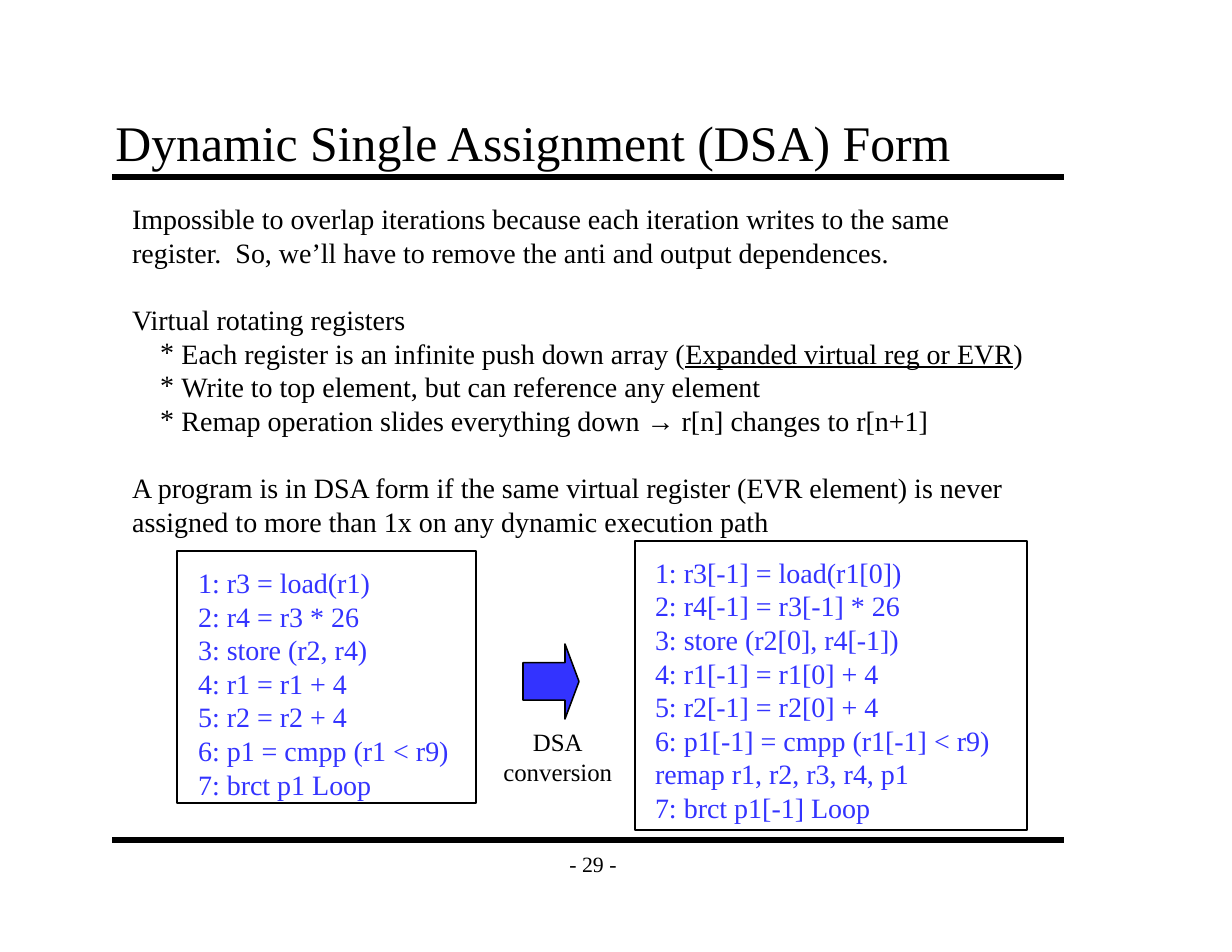
from dataclasses import dataclass

import pptx
import pptx.dml.color
import pptx.enum.shapes
import pptx.enum.text
import pptx.oxml.ns
import pptx.util
from lxml import etree

Inches = pptx.util.Inches
Pt = pptx.util.Pt
Align = pptx.enum.text.PP_ALIGN
Anchor = pptx.enum.text.MSO_ANCHOR
Shape = pptx.enum.shapes.MSO_SHAPE

BLACK = pptx.dml.color.RGBColor(0x00, 0x00, 0x00)
BLUE = pptx.dml.color.RGBColor(0x33, 0x33, 0xFF)
FONT = "Times New Roman"
LINE_RATIO = 1.2
BODY_SIZE = 18


@dataclass(frozen=True)
class Box:
    left: float
    top: float
    width: float
    height: float

    def lengths(self) -> tuple:
        return tuple(Inches(n) for n in (self.left, self.top, self.width, self.height))


@dataclass(frozen=True)
class Listing:
    frame: Box
    text: Box
    lines: tuple[str, ...]


@dataclass(frozen=True)
class BodyLine:
    text: str
    underlined: str = ""
    ending: str = ""
    bullet: bool = False
    opens_block: bool = False


BODY = (
    BodyLine("Impossible to overlap iterations because each iteration writes to the same"),
    BodyLine("register.  So, we’ll have to remove the anti and output dependences."),
    BodyLine("Virtual rotating registers", opens_block=True),
    BodyLine("Each register is an infinite push down array (",
             "Expanded virtual reg or EVR", ")", bullet=True),
    BodyLine("Write to top element, but can reference any element", bullet=True),
    BodyLine("Remap operation slides everything down → r[n] changes to r[n+1]", bullet=True),
    BodyLine("A program is in DSA form if the same virtual register (EVR element) is never",
             opens_block=True),
    BodyLine("assigned to more than 1x on any dynamic execution path"),
)

LISTINGS = (
    Listing(Box(1.58, 4.92, 2.67, 2.25), Box(1.67, 5, 2.44, 2.2), (
        "1: r3 = load(r1)",
        "2: r4 = r3 * 26",
        "3: store (r2, r4)",
        "4: r1 = r1 + 4",
        "5: r2 = r2 + 4",
        "6: p1 = cmpp (r1 < r9)",
        "7: brct p1 Loop",
    )),
    Listing(Box(5.67, 4.83, 3.5, 2.58), Box(5.75, 4.91, 3.19, 2.5), (
        "1: r3[-1] = load(r1[0])",
        "2: r4[-1] = r3[-1] * 26",
        "3: store (r2[0], r4[-1])",
        "4: r1[-1] = r1[0] + 4",
        "5: r2[-1] = r2[0] + 4",
        "6: p1[-1] = cmpp (r1[-1] < r9)",
        "remap r1, r2, r3, r4, p1",
        "7: brct p1[-1] Loop",
    )),
)


def place(shape, box: Box) -> None:
    shape.left, shape.top, shape.width, shape.height = box.lengths()


def format_paragraph(paragraph, size: float, color, alignment=Align.LEFT) -> None:
    paragraph.alignment = alignment
    paragraph.line_spacing = Pt(size * LINE_RATIO)
    paragraph.space_before = Pt(0)
    for run in paragraph.runs:
        run.font.name = FONT
        run.font.size = Pt(size)
        run.font.color.rgb = color


def set_insets(text_frame) -> None:
    text_frame.margin_left = text_frame.margin_right = Inches(0.11)
    text_frame.margin_top = text_frame.margin_bottom = Inches(0.06)


def add_text(slide, box: Box, lines: tuple[str, ...], size: float, color, alignment=Align.LEFT):
    shape = slide.shapes.add_textbox(*box.lengths())
    shape.text_frame.word_wrap = False
    shape.text_frame.text = "\n".join(lines)
    for paragraph in shape.text_frame.paragraphs:
        format_paragraph(paragraph, size, color, alignment)
    return shape


def add_outlined(slide, preset, box: Box):
    shape = slide.shapes.add_shape(preset, *box.lengths())
    shape.shadow.inherit = False
    shape.fill.background()
    shape.line.color.rgb = BLACK
    shape.line.width = Pt(1)
    return shape


def add_rule(slide, top: float) -> None:
    rule = slide.shapes.add_connector(
        pptx.enum.shapes.MSO_CONNECTOR.STRAIGHT,
        Inches(1), Inches(top), Inches(9.5), Inches(top))
    rule.line.color.rgb = BLACK
    rule.line.width = Pt(4)
    etree.SubElement(rule.element.spPr, pptx.oxml.ns.qn("a:effectLst"))


def set_bullet(paragraph, shown: bool) -> None:
    properties = paragraph._p.get_or_add_pPr()
    properties.set("marL", str(Inches(0.44) if shown else 0))
    properties.set("indent", str(Inches(-0.19) if shown else 0))
    if shown:
        font = etree.SubElement(properties, pptx.oxml.ns.qn("a:buFont"))
        font.set("typeface", FONT)
        etree.SubElement(properties, pptx.oxml.ns.qn("a:buChar")).set("char", "*")
    else:
        etree.SubElement(properties, pptx.oxml.ns.qn("a:buNone"))


def fill_title(title) -> None:
    place(title, Box(0.92, 0.92, 8.5, 0.67))
    frame = title.text_frame
    frame.text = "Dynamic Single Assignment (DSA) Form"
    frame.auto_size = pptx.enum.text.MSO_AUTO_SIZE.NONE
    frame.vertical_anchor = Anchor.BOTTOM
    set_insets(frame)
    format_paragraph(frame.paragraphs[0], 32, BLACK)
    frame.paragraphs[0].line_spacing = 1.0


def fill_body(body) -> None:
    place(body, Box(1.08, 1.75, 8.4, 3.1))
    frame = body.text_frame
    frame.word_wrap = True
    frame.auto_size = pptx.enum.text.MSO_AUTO_SIZE.NONE
    frame.vertical_anchor = Anchor.TOP
    frame.text = "\n".join(line.text for line in BODY)
    for paragraph, line in zip(frame.paragraphs, BODY):
        set_bullet(paragraph, line.bullet)
        if line.underlined:
            run = paragraph.add_run()
            run.text = line.underlined
            run.font.underline = True
            paragraph.add_run().text = line.ending
        format_paragraph(paragraph, BODY_SIZE, BLACK)
        if line.opens_block:
            paragraph.space_before = Pt(BODY_SIZE * LINE_RATIO)


def main() -> None:
    presentation = pptx.Presentation()
    presentation.slide_width = Inches(11)
    presentation.slide_height = Inches(8.5)
    slide = presentation.slides.add_slide(presentation.slide_layouts[1])

    for top in (1.58, 7.5):
        add_rule(slide, top)
    number = add_text(slide, Box(4.92, 7.5, 0.75, 0.42), ("- 29 -",), 14, BLACK, Align.CENTER)
    number.text_frame.vertical_anchor = Anchor.MIDDLE
    set_insets(number.text_frame)

    fill_title(slide.shapes.title)
    fill_body(slide.placeholders[1])

    for listing in LISTINGS:
        add_text(slide, listing.text, listing.lines, BODY_SIZE, BLUE)
        add_outlined(slide, Shape.RECTANGLE, listing.frame)

    arrow = add_outlined(slide, Shape.RIGHT_ARROW, Box(4.67, 5.75, 0.5, 0.67))
    arrow.adjustments[0] = 0.5
    arrow.adjustments[1] = 0.25
    arrow.fill.solid()
    arrow.fill.fore_color.rgb = BLUE
    add_text(slide, Box(4.39, 6.44, 1.18, 0.64), ("DSA", "conversion"), 16, BLACK, Align.CENTER)

    presentation.save("out.pptx")


if __name__ == "__main__":
    main()
